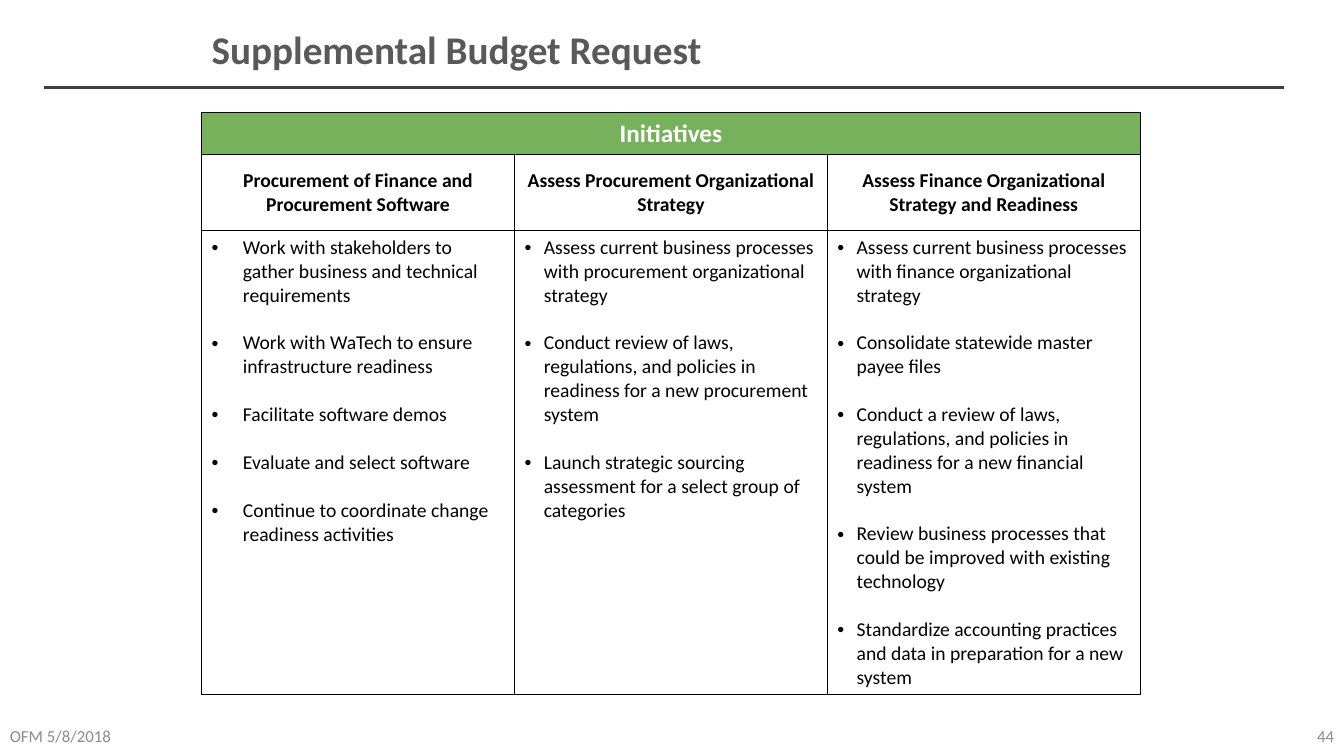
from lxml.etree import SubElement
from pptx import Presentation
from pptx.dml.color import RGBColor
from pptx.enum.shapes import MSO_CONNECTOR as Connector
from pptx.enum.text import MSO_ANCHOR as Anchor, PP_ALIGN as Align
from pptx.oxml import parse_xml
from pptx.oxml.ns import nsdecls, qn
from pptx.util import Inches, Pt

FONT = "Calibri"
BLACK, WHITE, GREEN = "000000", "FFFFFF", "77B15C"
TITLE_GRAY, RULE_GRAY, FOOTER_GRAY = "595959", "404040", "8C8C8C"

# Heading, bullet indent in inches, bullets
INITIATIVES = [
    ("Procurement of Finance and Procurement Software", 0.31, [
        "Work with stakeholders to gather business and technical requirements",
        "Work with WaTech to ensure infrastructure readiness",
        "Facilitate software demos",
        "Evaluate and select software",
        "Continue to coordinate change readiness activities",
    ]),
    ("Assess Procurement Organizational Strategy", 0.19, [
        "Assess current business processes with procurement organizational strategy",
        "Conduct review of laws, regulations, and policies in readiness for a new "
        "procurement system",
        "Launch strategic sourcing assessment for a select group of categories",
    ]),
    ("Assess Finance Organizational Strategy and Readiness", 0.19, [
        "Assess current business processes with finance organizational strategy",
        "Consolidate statewide master payee files",
        "Conduct a review of laws, regulations, and policies in readiness for a new "
        "financial system",
        "Review business processes that could be improved with existing technology",
        "Standardize accounting practices and data in preparation for a new system",
    ]),
]


def color(value):
    return RGBColor.from_string(value)


def format_paragraph(paragraph, size, text_color, bold=False, align=Align.LEFT):
    paragraph.alignment = align
    for run in paragraph.runs:
        run.font.name = FONT
        run.font.size = Pt(size)
        run.font.bold = bold
        run.font.color.rgb = color(text_color)


def add_text(slide, text, left, top, width, height, size, text_color, **style):
    box = slide.shapes.add_textbox(
        Inches(left), Inches(top), Inches(width), Inches(height))
    frame = box.text_frame
    frame.word_wrap = True
    frame.vertical_anchor = Anchor.MIDDLE
    frame.text = text
    format_paragraph(frame.paragraphs[0], size, text_color, **style)


def add_rule(slide, left, right, y):
    rule = slide.shapes.add_connector(
        Connector.STRAIGHT, Inches(left), Inches(y), Inches(right), Inches(y))
    rule.line.color.rgb = color(RULE_GRAY)
    rule.line.width = Pt(2.25)
    SubElement(rule.element.spPr, qn("a:effectLst"))


def style_cell(cell, fill):
    cell.fill.solid()
    cell.fill.fore_color.rgb = color(fill)
    properties = cell.fill._xPr
    for position, side in enumerate(("lnL", "lnR", "lnT", "lnB")):
        properties.insert(position, parse_xml(
            f'<a:{side} {nsdecls("a")} w="{Pt(1)}"><a:solidFill>'
            f'<a:srgbClr val="{BLACK}"/></a:solidFill></a:{side}>'))


def fill_heading(cell, text, size, text_color):
    cell.text = text
    cell.vertical_anchor = Anchor.MIDDLE
    format_paragraph(cell.text_frame.paragraphs[0], size, text_color,
                     bold=True, align=Align.CENTER)


def fill_bullets(cell, items, indent):
    cell.text = "\n".join(items)
    for index, paragraph in enumerate(cell.text_frame.paragraphs):
        format_paragraph(paragraph, 14, BLACK)
        if index:
            paragraph.space_before = Pt(17.1)
        properties = paragraph._p.get_or_add_pPr()
        properties.set("marL", str(Inches(indent)))
        properties.set("indent", str(-Inches(indent)))
        SubElement(properties, qn("a:buFont"), typeface="Arial")
        SubElement(properties, qn("a:buChar"), char="•")


def add_initiatives_table(slide):
    row_heights = (0.41, 0.76, 4.6)
    width = 9.31
    table = slide.shapes.add_table(
        len(row_heights), len(INITIATIVES), Inches(2), Inches(1.12),
        Inches(width), Inches(sum(row_heights))).table
    table.first_row = table.horz_banding = False
    for row, height in zip(table.rows, row_heights):
        row.height = Inches(height)
    for column in table.columns:
        column.width = Inches(width / len(INITIATIVES))
    for row_index, row in enumerate(table.rows):
        for cell in row.cells:
            style_cell(cell, WHITE if row_index else GREEN)

    # Banner across all columns, then one initiative per column
    table.cell(0, 0).merge(table.cell(0, len(INITIATIVES) - 1))
    fill_heading(table.cell(0, 0), "Initiatives", 18, WHITE)
    for column_index, (heading, indent, items) in enumerate(INITIATIVES):
        fill_heading(table.cell(1, column_index), heading, 14, BLACK)
        fill_bullets(table.cell(2, column_index), items, indent)


def main():
    presentation = Presentation()
    presentation.slide_width = Inches(13.33)
    presentation.slide_height = Inches(7.5)
    slide = presentation.slides.add_slide(presentation.slide_layouts[6])

    # Title and rule
    add_rule(slide, 0.44, 12.73, 0.87)
    add_text(slide, "Supplemental Budget Request", 2, 0.25, 8.62, 0.47,
             28, TITLE_GRAY, bold=True)

    # Initiatives
    add_initiatives_table(slide)

    # Footer
    add_text(slide, "OFM 5/8/2018", 0, 7.1, 3, 0.4, 12, FOOTER_GRAY)
    add_text(slide, "44", 10.33, 7.1, 3, 0.4, 12, FOOTER_GRAY, align=Align.RIGHT)

    presentation.save("out.pptx")


if __name__ == "__main__":
    main()
